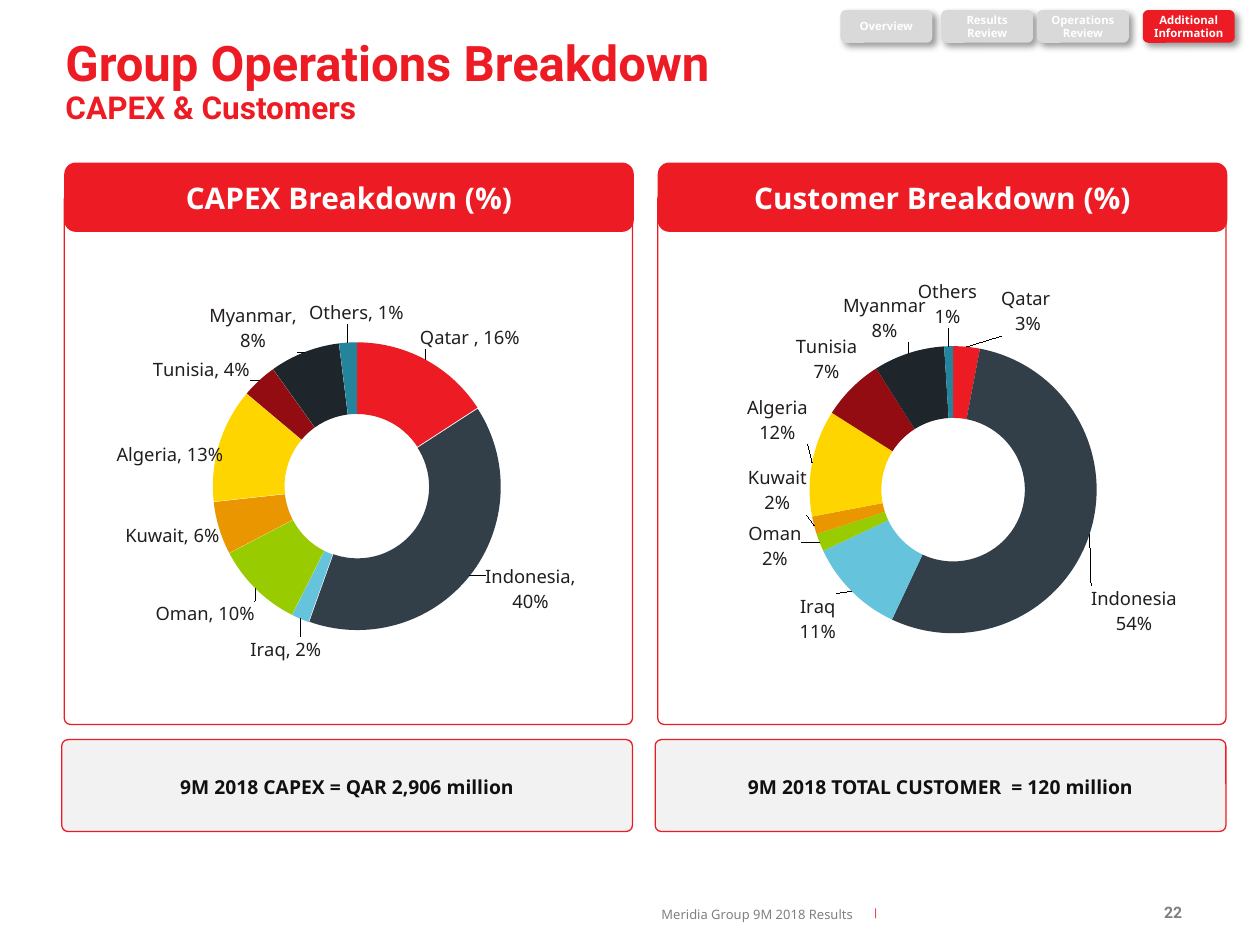
import dataclasses
import itertools
import math

import lxml.etree
import pptx
import pptx.chart.data
import pptx.dml.color
import pptx.enum.chart
import pptx.enum.shapes
import pptx.enum.text
import pptx.oxml
import pptx.oxml.ns
import pptx.util

Inches = pptx.util.Inches
Align = pptx.enum.text.PP_ALIGN
Anchor = pptx.enum.text.MSO_ANCHOR


@dataclasses.dataclass(frozen=True)
class Theme:
    red: str = "ED1C24"
    white: str = "FFFFFF"
    gray: str = "808080"
    tab: str = "D9D9D9"
    total: str = "F2F2F2"
    ink: str = "110F10"
    label: str = "221E20"
    slices: tuple = ("ED1C24", "333F48", "65C4DB", "99CC00", "EA9600",
                     "FFD500", "930C11", "1F262B", "24849C")
    heading_font: str = "Roboto"
    body_font: str = "Noto Sans"
    small_font: str = "Arial"
    title_size: float = 28
    subtitle_size: float = 18
    header_size: float = 17
    total_size: float = 11
    label_size: float = 10.5
    page_size: float = 9
    footer_size: float = 7.4
    tab_size: float = 6.5
    bar_size: float = 6


def rgb(value):
    return pptx.dml.color.RGBColor.from_string(value)


def apply(target, formats):
    for name, value in formats.items():
        setattr(target, name, value)


class SlideBuilder:
    def __init__(self, slide, theme):
        self.slide = slide
        self.theme = theme

    def style(self, font, size, color, bold=False, name=None):
        apply(font, {"size": pptx.util.Pt(size), "bold": bold,
                     "name": name or self.theme.body_font})
        font.color.rgb = rgb(color)

    def fill_text(self, shape, runs, align=Align.LEFT, anchor=Anchor.MIDDLE,
                  insets=(0.1, 0.05, 0.1, 0.05), spacing=None):
        frame = shape.text_frame
        sides = ("margin_left", "margin_top", "margin_right", "margin_bottom")
        apply(frame, {"word_wrap": True, "vertical_anchor": anchor})
        apply(frame, dict(zip(sides, map(Inches, insets))))
        paragraph = frame.paragraphs[0]
        apply(paragraph, {"alignment": align, "line_spacing": spacing})
        for index, (text, style) in enumerate(runs):
            if index:
                paragraph.add_line_break()
            run = paragraph.add_run()
            run.text = text
            self.style(run.font, **style)

    def text(self, box, runs, **layout):
        shape = self.slide.shapes.add_textbox(*map(Inches, box))
        self.fill_text(shape, runs, **layout)

    def card(self, box, fill, line=None, corner=0.1667):
        shape = self.slide.shapes.add_shape(
            pptx.enum.shapes.MSO_SHAPE.ROUNDED_RECTANGLE, *map(Inches, box))
        shape.shadow.inherit = False
        shape.adjustments[0] = corner
        shape.fill.solid()
        shape.fill.fore_color.rgb = rgb(fill)
        if line:
            shape.line.color.rgb = rgb(line)
            shape.line.width = pptx.util.Pt(0.75)
        else:
            shape.line.fill.background()
        return shape

    def tab(self, left, lines, fill):
        shape = self.card((left, 0.08, 0.73, 0.26), fill)
        effects = shape.element.spPr.find(pptx.oxml.ns.qn("a:effectLst"))
        effects.append(pptx.oxml.parse_xml(
            f'<a:outerShdw {pptx.oxml.ns.nsdecls("a")} blurRad="50800" dist="38100" '
            'dir="2700000" algn="tl" rotWithShape="0"><a:srgbClr val="000000">'
            '<a:alpha val="40000"/></a:srgbClr></a:outerShdw>'))
        style = {"size": self.theme.tab_size, "color": self.theme.white, "bold": True}
        self.fill_text(shape, [(line, style) for line in lines], align=Align.CENTER,
                       insets=(0.05,) * 4)

    def layout(self, values, targets=()):
        layout = lxml.etree.Element(pptx.oxml.ns.qn("c:layout"))
        manual = lxml.etree.SubElement(layout, pptx.oxml.ns.qn("c:manualLayout"))
        for name, value in (*targets, *values):
            part = lxml.etree.SubElement(manual, pptx.oxml.ns.qn(f"c:{name}"))
            part.set("val", value if isinstance(value, str) else f"{value:.4f}")
        return layout

    def doughnut(self, box, plot, categories, values, labels, separator,
                 explosion=None, custom=None):
        data = pptx.chart.data.CategoryChartData(number_format="0%")
        data.categories = categories
        data.add_series("Series 1", values)
        chart = self.slide.shapes.add_chart(
            pptx.enum.chart.XL_CHART_TYPE.DOUGHNUT, *map(Inches, box), data).chart
        apply(chart, {"has_legend": False, "has_title": False})
        self.style(chart.font, 10, self.theme.label)
        chart.plots[0].vary_by_categories = False
        area = chart.element.chart.plotArea
        for old in area.findall(pptx.oxml.ns.qn("c:layout")):
            area.remove(old)
        area.insert(0, self.layout(
            zip("xywh", plot),
            (("layoutTarget", "inner"), ("xMode", "edge"), ("yMode", "edge"))))
        area.xpath(".//c:holeSize")[0].set("val", "50")

        left, top, width, height = box
        center_x = left + width * (plot[0] + plot[2] / 2)
        center_y = top + height * (plot[1] + plot[3] / 2)
        ring = 0.75 * min(width * plot[2], height * plot[3]) / 2
        ends = itertools.accumulate(values)
        style = {"size": self.theme.label_size, "color": self.theme.label}
        series = chart.plots[0].series[0]
        for index, (value, end, (x, y)) in enumerate(zip(values, ends, labels)):
            point = series.points[index]
            point.format.fill.solid()
            point.format.fill.fore_color.rgb = rgb(self.theme.slices[index])
            point.format.line.fill.background()
            label = point.data_label
            if custom and index in custom:
                run = label.text_frame.paragraphs[0].add_run()
                run.text = custom[index]
                self.style(run.font, **style)
            else:
                self.style(label.font, **style)
            angle = 2 * math.pi * (end - value / 2) / sum(values)
            shift_x = (x - center_x - ring * math.sin(angle)) / width
            shift_y = (y - center_y + ring * math.cos(angle)) / height
            node = area.xpath(f".//c:dLbl[c:idx/@val='{index}']")[0]
            node.insert(1, self.layout((("x", shift_x), ("y", shift_y))))
            node.find(pptx.oxml.ns.qn("c:showCatName")).set("val", "1")
            lxml.etree.SubElement(node, pptx.oxml.ns.qn("c:separator")).text = separator
        if explosion:
            node = lxml.etree.Element(pptx.oxml.ns.qn("c:explosion"))
            node.set("val", str(explosion))
            area.xpath(".//c:dPt")[0].addprevious(node)

    def panel(self, left, heading, total):
        theme = self.theme
        self.card((left, 1.53, 4.51, 4.22), theme.white, theme.red, 0.012)
        header = self.card((left, 1.29, 4.52, 0.55), theme.red)
        self.fill_text(header, [(heading, {"size": theme.header_size, "color": theme.white,
                                           "bold": True})], align=Align.CENTER)
        footer = self.card((left - 0.02, 5.87, 4.53, 0.73), theme.total, theme.red, 0.068)
        self.fill_text(footer, [(total, {"size": theme.total_size, "color": theme.ink,
                                         "bold": True})],
                       align=Align.CENTER, insets=(0,) * 4, spacing=1.1)


def main():
    presentation = pptx.Presentation()
    apply(presentation, {"slide_width": Inches(10), "slide_height": Inches(7.5)})
    theme = Theme()
    builder = SlideBuilder(
        presentation.slides.add_slide(presentation.slide_layouts[6]), theme)

    heading = {"color": theme.red, "bold": True, "name": theme.heading_font}
    builder.text((0.52, 0.05, 8.96, 1),
                 [("Group Operations Breakdown", {"size": theme.title_size, **heading}),
                  ("CAPEX & Customers", {"size": theme.subtitle_size, **heading})],
                 anchor=Anchor.BOTTOM, insets=(0, 0.05, 0.1, 0.05), spacing=0.9)
    for left, lines, fill in (
            (6.67, ["Overview"], theme.tab),
            (7.47, ["Results", "Review"], theme.tab),
            (8.23, ["Operations", "Review"], theme.tab),
            (9.07, ["Additional", "Information"], theme.red)):
        builder.tab(left, lines, fill)

    builder.panel(0.51, "CAPEX Breakdown (%)", "9M 2018 CAPEX = QAR 2,906 million")
    builder.panel(5.22, "Customer Breakdown (%)", "9M 2018 TOTAL CUSTOMER  = 120 million")

    countries = ("Qatar ", "Indonesia", "Iraq", "Oman", "Kuwait", "Algeria",
                 "Tunisia", "Myanmar", "Others")
    builder.doughnut(
        (0.92, 2.01, 3.92, 3.59), (0.185, 0.197, 0.606, 0.637), countries,
        (0.16, 0.4, 0.02, 0.1, 0.06, 0.13, 0.04, 0.08, 0.02),
        ((3.73, 2.68), (4.21, 4.67), (2.27, 5.15), (1.63, 4.87), (1.37, 4.25),
         (1.35, 3.61), (1.6, 2.93), (2.01, 2.6), (2.83, 2.48)),
        ", ", explosion=1, custom={8: "Others, 1%"})
    builder.doughnut(
        (5.75, 1.97, 3.73, 3.59), (0.181, 0.127, 0.611, 0.814), countries,
        (0.03, 0.54, 0.11, 0.02, 0.02, 0.12, 0.07, 0.08, 0.01),
        ((8.16, 2.47), (9, 4.85), (6.49, 4.91), (6.15, 4.33), (6.17, 3.89),
         (6.17, 3.33), (6.56, 2.85), (7.02, 2.52), (7.52, 2.41)),
        "\n")

    builder.text((5.25, 7.11, 2, 0.26),
                 [("Meridia Group 9M 2018 Results",
                   {"size": theme.footer_size, "color": theme.gray})],
                 anchor=Anchor.BOTTOM, insets=(0, 0.05, 0, 0.05))
    builder.text((6.82, 7.14, 0.26, 0.2),
                 [("|", {"size": theme.bar_size, "color": theme.red,
                         "name": theme.small_font})], align=Align.CENTER)
    builder.text((8.83, 7.04, 0.65, 0.4),
                 [("22", {"size": theme.page_size, "color": theme.gray, "bold": True,
                          "name": theme.heading_font})], align=Align.RIGHT)
    presentation.save("out.pptx")


if __name__ == "__main__":
    main()
